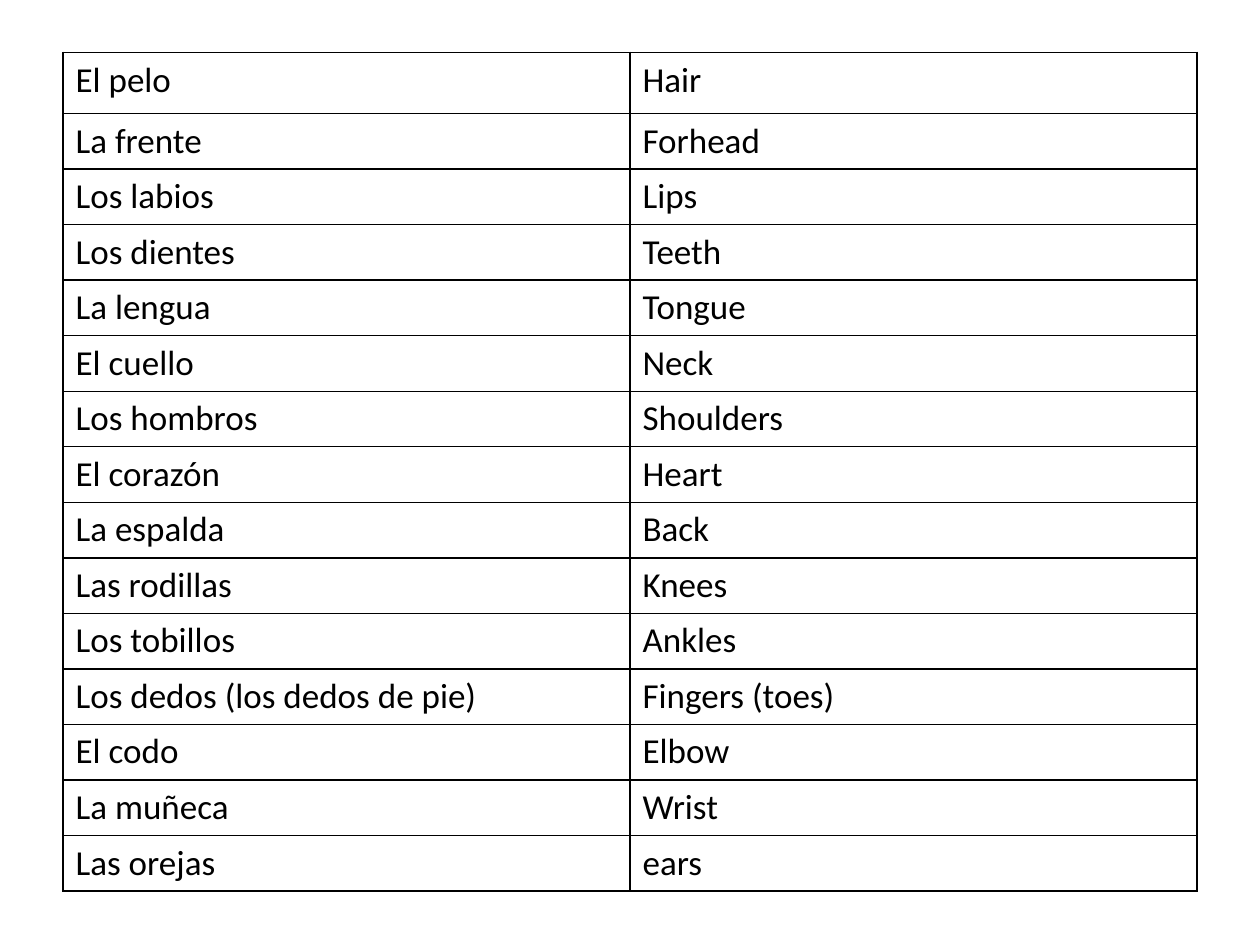
from dataclasses import dataclass

from lxml import etree
from pptx import Presentation
from pptx.dml.color import RGBColor
from pptx.oxml import ns
from pptx.util import Pt


@dataclass(frozen=True)
class Theme:
    font: str = "Calibri"
    size: int = 20
    ink: str = "000000"
    border: float = 1


THEME = Theme()

VOCABULARY = [
    ("El pelo", "Hair"),
    ("La frente", "Forhead"),
    ("Los labios", "Lips"),
    ("Los dientes", "Teeth"),
    ("La lengua", "Tongue"),
    ("El cuello", "Neck"),
    ("Los hombros", "Shoulders"),
    ("El corazón", "Heart"),
    ("La espalda", "Back"),
    ("Las rodillas", "Knees"),
    ("Los tobillos", "Ankles"),
    ("Los dedos (los dedos de pie)", "Fingers (toes)"),
    ("El codo", "Elbow"),
    ("La muñeca", "Wrist"),
    ("Las orejas", "ears"),
]


def add_borders(cell):
    properties = cell._tc.get_or_add_tcPr()
    for position, side in enumerate(("lnL", "lnR", "lnT", "lnB")):
        border = etree.Element(ns.qn(f"a:{side}"), w=str(Pt(THEME.border)))
        fill = etree.SubElement(border, ns.qn("a:solidFill"))
        etree.SubElement(fill, ns.qn("a:srgbClr"), val=THEME.ink)
        properties.insert(position, border)


def fill_cell(cell, word):
    cell.text = word
    cell.fill.background()
    add_borders(cell)
    font = cell.text_frame.paragraphs[0].runs[0].font
    formats = {"name": THEME.font, "size": Pt(THEME.size), "bold": False}
    for attribute, value in formats.items():
        setattr(font, attribute, value)
    font.color.rgb = RGBColor.from_string(THEME.ink)


def add_vocabulary(slide, left, top, width, first_height, row_height):
    height = first_height + row_height * (len(VOCABULARY) - 1)
    vocabulary = slide.shapes.add_table(
        len(VOCABULARY), 2, Pt(left), Pt(top), Pt(width), Pt(height)
    ).table
    for option in ("first_row", "horz_banding"):
        setattr(vocabulary, option, False)
    for column in vocabulary.columns:
        column.width = Pt(width / 2)
    for index, (row, words) in enumerate(zip(vocabulary.rows, VOCABULARY)):
        row.height = Pt(row_height if index else first_height)
        for cell, word in zip(row.cells, words):
            fill_cell(cell, word)


def main():
    deck = Presentation()
    deck.slide_width, deck.slide_height = Pt(720), Pt(540)
    slide = deck.slides.add_slide(deck.slide_layouts[6])
    add_vocabulary(slide, left=36, top=30, width=648, first_height=35, row_height=29.5)
    deck.save("out.pptx")


if __name__ == "__main__":
    main()
